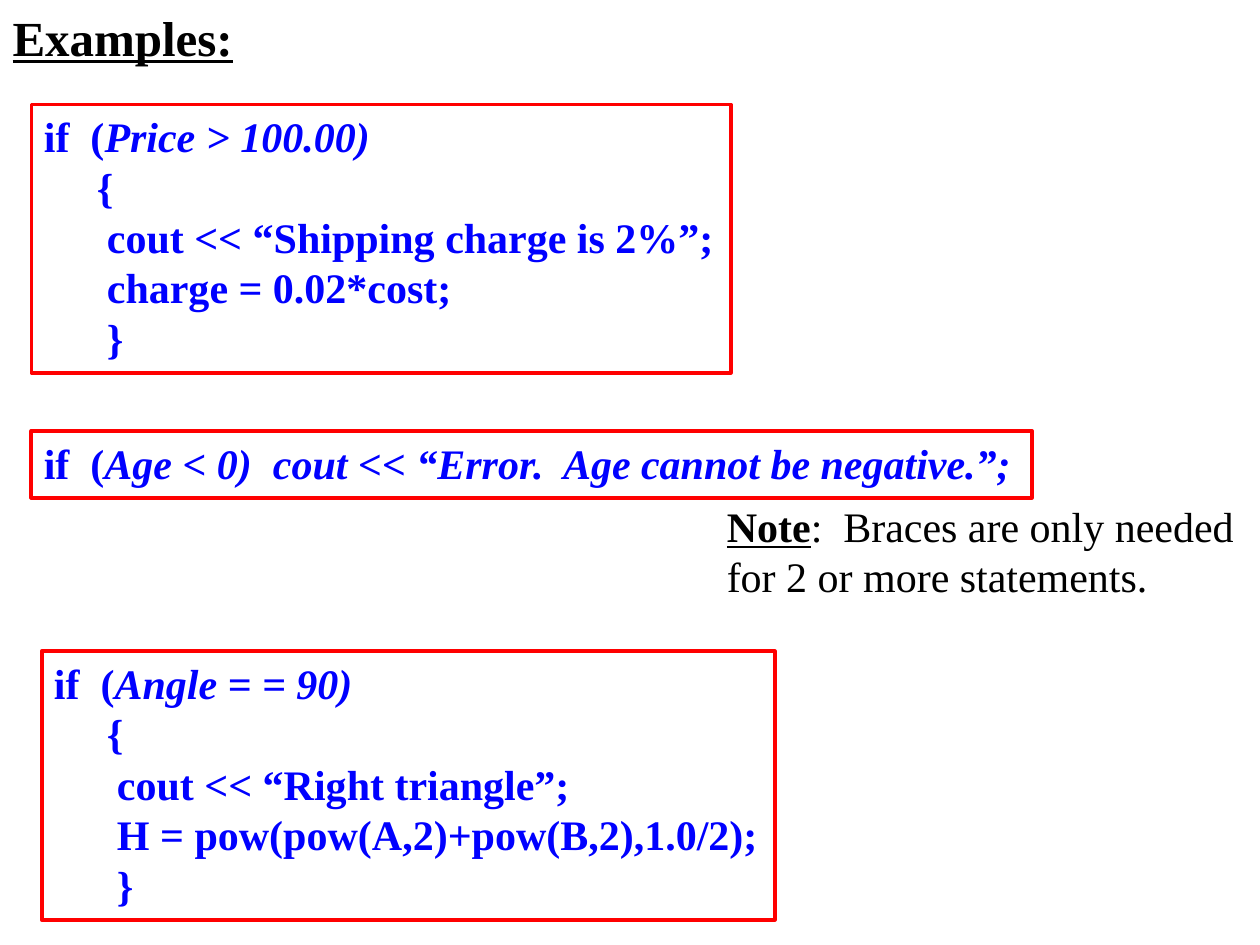
import pptx
import pptx.util
import pptx.dml.color
import pptx.enum.text

Inches, Pt = pptx.util.Inches, pptx.util.Pt
FONT = "Times New Roman"
BLACK, BLUE, RED = "000000", "0000FF", "FF0000"
BRACE, BODY = 0.42, 0.5

TITLE = "Examples:"
EXAMPLES = [
    ((0.25, 0.83, 5.55, 2.13), "Price > 100.00)",
     [(BRACE, "{"), (BODY, "cout << “Shipping charge is 2%”;"),
      (BODY, "charge = 0.02*cost;"), (BODY, "}")]),
    ((0.25, 3.42, 7.94, 0.53),
     "Age < 0)  cout << “Error.  Age cannot be negative.”;", []),
    ((0.33, 5.17, 5.82, 2.13), "Angle = = 90)",
     [(BRACE, "{"), (BODY, "cout << “Right triangle”;"),
      (BODY, "H = pow(pow(A,2)+pow(B,2),1.0/2);"), (BODY, "}")]),
]
NOTE_BOX = (5.67, 3.92, 4.33, 0.9)
NOTE = ("Note", ":  Braces are only needed for 2 or more statements.")


def rgb(color):
    return pptx.dml.color.RGBColor.from_string(color)


def add_run(p, text, color, size=24, bold=True, italic=False, underline=False):
    r = p.add_run()
    r.text = text
    f = r.font
    f.name, f.size, f.bold, f.italic, f.underline = (
        FONT, Pt(size), bold, italic, underline)
    f.color.rgb = rgb(color)


def add_box(s, box, wrap):
    sp = s.shapes.add_textbox(*map(Inches, box))
    tf = sp.text_frame
    tf.word_wrap = wrap
    tf.auto_size = pptx.enum.text.MSO_AUTO_SIZE.SHAPE_TO_FIT_TEXT
    return sp


def add_example(s, box, condition, body):
    sp = add_box(s, box, False)
    sp.line.color.rgb = rgb(RED)
    sp.line.width = Pt(2.25)
    tf = sp.text_frame
    p = tf.paragraphs[0]
    add_run(p, "if  (", BLUE)
    add_run(p, condition, BLUE, italic=True)
    for indent, text in body:
        p = tf.add_paragraph()
        pPr = p._p.get_or_add_pPr()
        pPr.set("marL", str(Inches(indent)))
        pPr.set("indent", "0")
        add_run(p, text, BLUE)


def main():
    prs = pptx.Presentation()
    prs.slide_width, prs.slide_height = Inches(10), Inches(7.5)
    s = prs.slides.add_slide(prs.slide_layouts[5])

    title = s.shapes.title
    title.left, title.top, title.width, title.height = map(
        Inches, (0, 0, 8.5, 0.58))
    tf = title.text_frame
    tf.vertical_anchor = pptx.enum.text.MSO_ANCHOR.MIDDLE
    p = tf.paragraphs[0]
    p.alignment = pptx.enum.text.PP_ALIGN.LEFT
    add_run(p, TITLE, BLACK, size=28, underline=True)

    for example in EXAMPLES:
        add_example(s, *example)

    p = add_box(s, NOTE_BOX, True).text_frame.paragraphs[0]
    label, text = NOTE
    add_run(p, label, BLACK, underline=True)
    add_run(p, text, BLACK, bold=False)

    prs.save("out.pptx")


if __name__ == "__main__":
    main()
